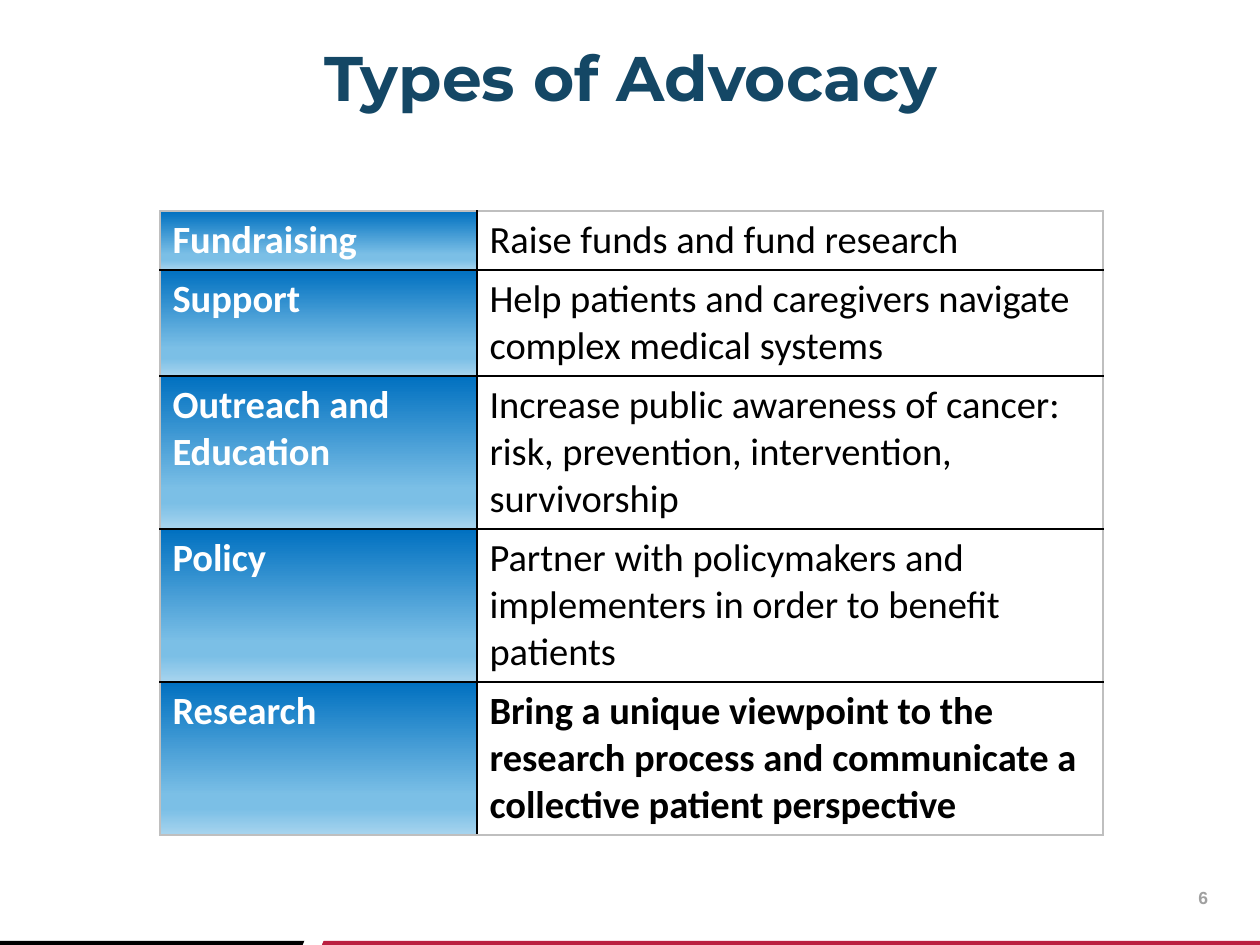
from lxml import etree
from pptx import Presentation
from pptx import util as u
from pptx.dml.color import RGBColor
from pptx.enum import shapes, text
from pptx.oxml import ns

TITLE = "Types of Advocacy"
PAGE_NUMBER = "6"
# Type, description paragraphs, description is bold, row height
ROWS = [
    ("Fundraising", ["Raise funds and fund research"], False, 59),
    ("Support", ["Help patients and caregivers navigate complex medical systems"], False, 106),
    ("Outreach and Education",
     ["Increase public awareness of cancer: risk, prevention, intervention, survivorship"],
     False, 153),
    ("Policy", ["Partner with policymakers and implementers in order to benefit patients"],
     False, 153),
    ("Research", ["Bring a unique viewpoint to the",
                  "research process and communicate a collective patient perspective"], True, 153),
]
COLUMNS = [317, 626]
TABLE_LEFT, TABLE_TOP = 160, 211
GRADIENT = [(0, "0070C0"), (74, "7BBFE6"), (83, "7BBFE6"), (100, "A7D4EE")]
OUTER, INNER = "BFBFBF", "000000"
FOOTER = [
    ("RECTANGLE", (315, 941, 945, 6), "BB1F40"),
    ("RECTANGLE", (0, 941, 315, 6), "000000"),
    ("PARALLELOGRAM", (302, 935, 24, 12), "FFFFFF"),
]
TITLE_FORMAT = {"size": u.Pt(36), "name": "Montserrat", "bold": True}
NUMBER_FORMAT = {"size": u.Pt(10), "name": "Arial", "bold": True}
CELL_FORMAT = {"size": u.Pt(22), "name": "Calibri"}


def px(length):
    return u.Emu(round(length * 914400 / 126))


def color(value):
    return RGBColor.from_string(value)


def write(frame, lines, font_format, font_color, **paragraph_format):
    frame.word_wrap = True
    frame.text = "\n".join(lines)
    for paragraph in frame.paragraphs:
        for name, value in paragraph_format.items():
            setattr(paragraph, name, value)
        for run in paragraph.runs:
            for name, value in font_format.items():
                setattr(run.font, name, value)
            run.font.color.rgb = color(font_color)


def add_text(slide, box, line, font_format, font_color, anchor, **paragraph_format):
    frame = slide.shapes.add_textbox(*map(px, box)).text_frame
    for side in ("left", "top", "right", "bottom"):
        setattr(frame, f"margin_{side}", 0)
    frame.vertical_anchor = anchor
    write(frame, [line], font_format, font_color, **paragraph_format)


def add_element(parent, tag, **attributes):
    return etree.SubElement(parent, ns.qn(f"a:{tag}"), attributes)


def add_border(properties, side, value):
    line = add_element(properties, f"ln{side}", w=str(u.Pt(1)))
    add_element(add_element(line, "solidFill"), "srgbClr", val=value)


def add_gradient(properties):
    fill = add_element(properties, "gradFill", rotWithShape="1")
    stops = add_element(fill, "gsLst")
    for position, value in GRADIENT:
        stop = add_element(stops, "gs", pos=str(position * 1000))
        add_element(stop, "srgbClr", val=value)
    add_element(fill, "lin", ang="5400000", scaled="0")


def add_types_table(slide):
    heights = [row[-1] for row in ROWS]
    box = TABLE_LEFT, TABLE_TOP, sum(COLUMNS), sum(heights)
    table = slide.shapes.add_table(len(ROWS), len(COLUMNS), *map(px, box)).table
    table.first_row = table.horz_banding = False
    for column, width in zip(table.columns, COLUMNS):
        column.width = px(width)
    last = len(ROWS) - 1
    for index, (kind, description, bold, height) in enumerate(ROWS):
        table.rows[index].height = px(height)
        type_cell, description_cell = table.rows[index].cells
        write(type_cell.text_frame, [kind], CELL_FORMAT | {"bold": True}, "FFFFFF")
        write(description_cell.text_frame, description, CELL_FORMAT | {"bold": bold}, "000000")
        for cell in (type_cell, description_cell):
            is_type = cell is type_cell
            properties = cell._tc.get_or_add_tcPr()
            add_border(properties, "L", OUTER if is_type else INNER)
            add_border(properties, "R", INNER if is_type else OUTER)
            add_border(properties, "T", OUTER if index == 0 else INNER)
            add_border(properties, "B", OUTER if index == last else INNER)
            if is_type:
                add_gradient(properties)
            else:
                cell.fill.background()


def add_footer(slide):
    for kind, box, fill in FOOTER:
        shape = slide.shapes.add_shape(shapes.MSO_SHAPE[kind], *map(px, box))
        shape.shadow.inherit = False
        shape.fill.solid()
        shape.fill.fore_color.rgb = color(fill)
        shape.line.fill.background()
        if kind == "PARALLELOGRAM":
            shape.adjustments[0] = 0.42


def main():
    presentation = Presentation()
    presentation.slide_width, presentation.slide_height = px(1260), px(945)
    slide = presentation.slides.add_slide(presentation.slide_layouts[6])
    add_text(slide, (1166, 887, 42, 22), PAGE_NUMBER, NUMBER_FORMAT, "A0A0A0",
             text.MSO_ANCHOR.TOP, alignment=text.PP_ALIGN.RIGHT)
    add_footer(slide)
    add_text(slide, (68, 57, 1125, 58), TITLE, TITLE_FORMAT, "144765",
             text.MSO_ANCHOR.BOTTOM, alignment=text.PP_ALIGN.CENTER, line_spacing=0.9)
    add_types_table(slide)
    presentation.save("out.pptx")


if __name__ == "__main__":
    main()
